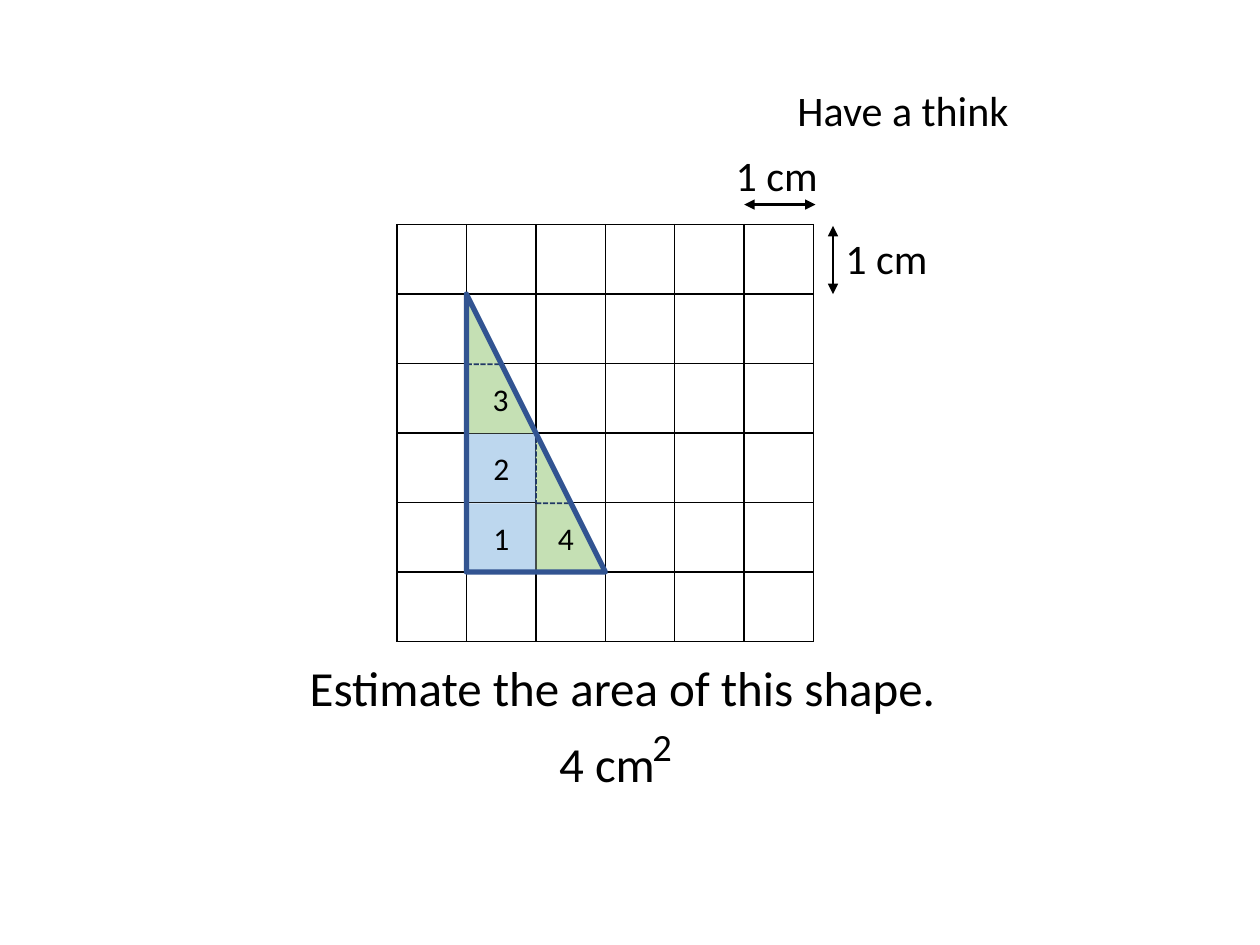
from lxml import etree
from pptx import Presentation
from pptx.dml.color import RGBColor
from pptx.enum.dml import MSO_LINE
from pptx.enum.shapes import MSO_CONNECTOR, MSO_SHAPE
from pptx.enum.text import MSO_ANCHOR, MSO_AUTO_SIZE, PP_ALIGN
from pptx.oxml.ns import qn
from pptx.util import Pt

CELL = 39.7
COUNT = 6
BLACK, BLUE, GREEN = "000000", "BDD7EE", "C5E0B4"
NAVY, OUTLINE = "203864", "325491"


def color(value):
    return RGBColor.from_string(value)


def points(*lengths):
    return [Pt(length) for length in lengths]


def write(frame, text, size, align=PP_ALIGN.LEFT):
    paragraph = frame.paragraphs[0]
    paragraph.alignment = align
    run = paragraph.add_run()
    run.text = text
    for name, value in {"name": "Calibri", "size": Pt(size)}.items():
        setattr(run.font, name, value)
    run.font.color.rgb = color(BLACK)


def add_text(slide, box, text, size):
    frame = slide.shapes.add_textbox(*points(*box)).text_frame
    frame.word_wrap = True
    frame.auto_size = MSO_AUTO_SIZE.SHAPE_TO_FIT_TEXT
    write(frame, text, size)


def paint(shape, fill=None, line=None, width=1, dash=None):
    shape.shadow.inherit = False
    if fill:
        shape.fill.solid()
        shape.fill.fore_color.rgb = color(fill)
    else:
        shape.fill.background()
    if line:
        shape.line.color.rgb = color(line)
        shape.line.width = Pt(width)
        shape.line.dash_style = dash
    else:
        shape.line.fill.background()


def add_grid(slide, left, top):
    side = CELL * COUNT
    table = slide.shapes.add_table(COUNT, COUNT, *points(left, top, side, side)).table
    table.first_row = table.horz_banding = False
    for part in table.columns:
        part.width = Pt(CELL)
    for part in table.rows:
        part.height = Pt(CELL)
    for cell in table.iter_cells():
        properties = cell._tc.get_or_add_tcPr()
        for edge in ("lnL", "lnR", "lnT", "lnB"):
            border = etree.SubElement(properties, qn(f"a:{edge}"), w=str(Pt(1)))
            solid = etree.SubElement(border, qn("a:solidFill"))
            etree.SubElement(solid, qn("a:srgbClr"), val=BLACK)
        cell.fill.background()


def add_arrow(slide, x1, y1, x2, y2):
    arrow = slide.shapes.add_connector(MSO_CONNECTOR.STRAIGHT, *points(x1, y1, x2, y2))
    arrow.line.color.rgb = color(BLACK)
    arrow.line.width = Pt(1.5)
    line = arrow.line._get_or_add_ln()
    for end in ("headEnd", "tailEnd"):
        etree.SubElement(line, qn(f"a:{end}"), type="triangle")
    etree.SubElement(arrow._element.spPr, qn("a:effectLst"))


def add_scale(slide, left, top):
    """Label one cell's width and height, at the grid's top right corner."""
    right = left + CELL * COUNT
    add_arrow(slide, right - CELL, top - 11.5, right + 1, top - 11.5)
    add_text(slide, (right - 51.7, top - 46.8, 125.3, 36.3), "1 cm", 24)
    add_arrow(slide, right + 11, top + 0.7, right + 11, top + CELL)
    add_text(slide, (right + 11, top + 0.7, 125.3, 36.3), "1 cm", 24)


def add_whole_square(slide, left, top, number):
    square = slide.shapes.add_shape(
        MSO_SHAPE.RECTANGLE, *points(left + 0.5, top + 0.5, 39, 39))
    paint(square, BLUE)
    square.text_frame.vertical_anchor = MSO_ANCHOR.MIDDLE
    write(square.text_frame, number, 18, PP_ALIGN.CENTER)


def add_paired_parts(slide, left, top, number, indent):
    """A part-filled cell, and the half-width triangle above it."""
    half = CELL / 2
    builder = slide.shapes.build_freeform(*points(left + 0.5, top + 0.5))
    builder.add_line_segments(
        [points(left + x, top + y)
         for x, y in ((half + 0.5, 0.5), (CELL, CELL), (0.5, CELL))])
    paint(builder.convert_to_shape(), GREEN)

    # Turned a quarter, so the box is as wide as the triangle is tall
    triangle = slide.shapes.add_shape(
        MSO_SHAPE.RIGHT_TRIANGLE,
        *points(left + 0.5 - half / 2, top - CELL * 0.75, CELL, half + 0.7))
    triangle.rotation = 90
    triangle._element.spPr.find(qn("a:xfrm")).set("flipH", "1")
    paint(triangle, GREEN, NAVY, 1, MSO_LINE.SQUARE_DOT)
    add_text(slide, (left + indent, top + 6, 16.6, 29), number, 18)


def add_counted_triangle(slide, left, top):
    def corner(column, row):
        return left + column * CELL, top + row * CELL

    for number, row in (("1", 4), ("2", 3)):
        add_whole_square(slide, *corner(1, row), number)
    for number, column, row, indent in (("3", 1, 2, 7.9), ("4", 2, 4, 5.5)):
        add_paired_parts(slide, *corner(column, row), number, indent)
    outline = slide.shapes.add_shape(
        MSO_SHAPE.RIGHT_TRIANGLE, *points(*corner(1, 1), CELL * 2, CELL * 4))
    paint(outline, line=OUTLINE, width=3)


def add_question(slide, left, top):
    add_text(slide, (left, top, 400.3, 41.2), "Estimate the area of this shape.", 28)
    # Answer with its raised power
    add_text(slide, (left + 142.6, top + 43.2, 126.7, 41.2), "4 cm", 28)
    add_text(slide, (left + 195.8, top + 37.4, 126.7, 33.9), "2", 22)


def build():
    presentation = Presentation()
    presentation.slide_width, presentation.slide_height = points(720, 540)
    slide = presentation.slides.add_slide(presentation.slide_layouts[6])
    grid = (226.8, 128.4)
    add_grid(slide, *grid)
    add_scale(slide, *grid)
    add_counted_triangle(slide, *grid)
    add_question(slide, 169.9, 372.2)
    # Prompt
    add_text(slide, (448.6, 44.6, 164.9, 36.3), "Have a think", 24)
    presentation.save("out.pptx")


if __name__ == "__main__":
    build()
